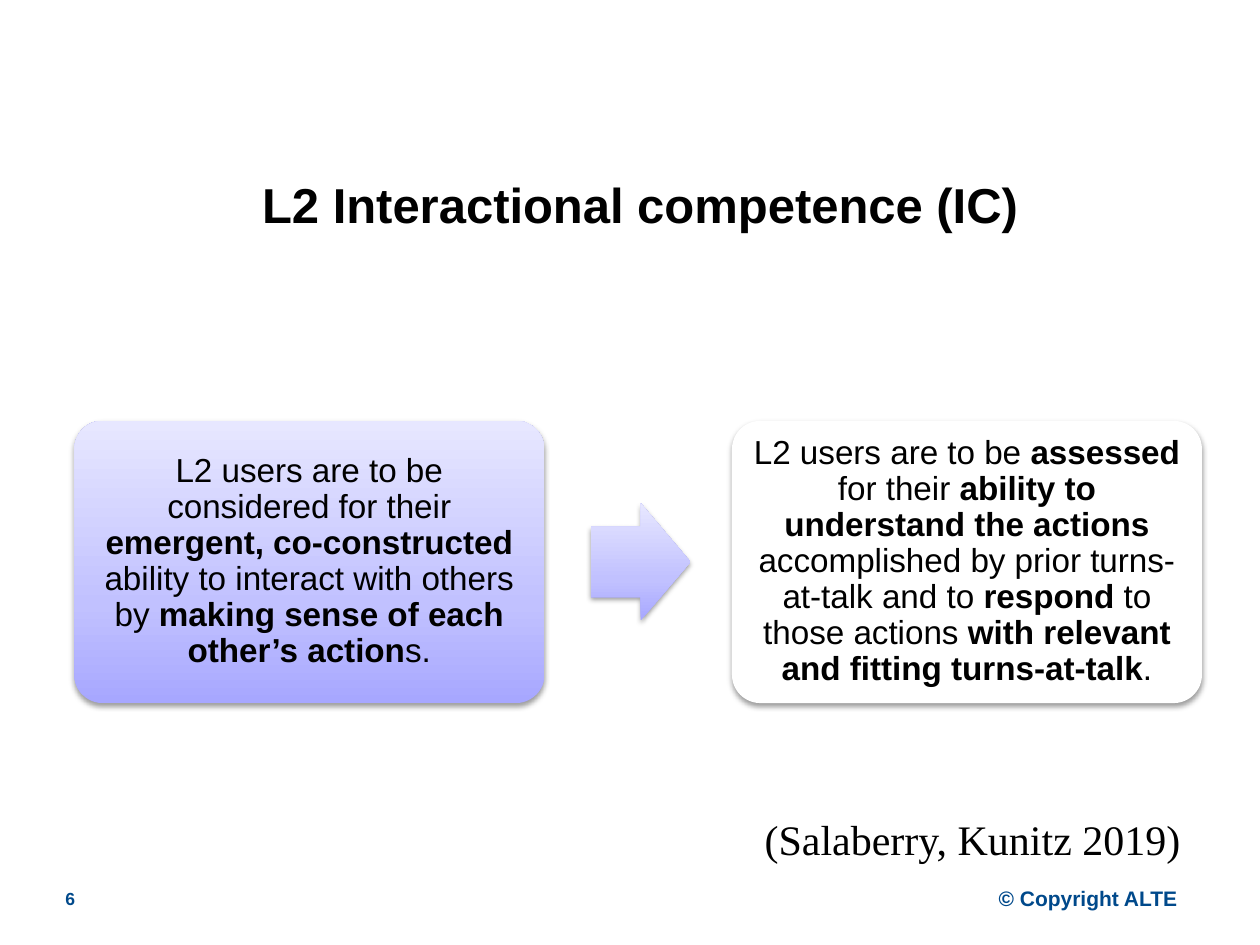
from copy import deepcopy

from lxml import etree
from pptx import Presentation
from pptx.dml.color import RGBColor
from pptx.enum.shapes import MSO_SHAPE
from pptx.enum.text import MSO_ANCHOR, PP_ALIGN
from pptx.oxml.ns import qn
from pptx.util import Inches, Pt

ROUNDED, ARROW = MSO_SHAPE.ROUNDED_RECTANGLE, MSO_SHAPE.RIGHT_ARROW
LEFT, CENTER = PP_ALIGN.LEFT, PP_ALIGN.CENTER
MIDDLE = MSO_ANCHOR.MIDDLE
TITLE_ONLY = 5

COLORS = {
    "text": "000000",
    "footer": "00498B",
    "white": "FFFFFF",
    "shadow": "000000",
    "deep": "A7A7FF",
    "mid": "C1C1FF",
    "pale": "E7E7FF",
}
GRADIENT = [(0, "deep"), (0.35, "mid"), (1, "pale")]

# Each statement is a list of (text, bold) spans
EMERGENT = [
    ("L2 users are to be considered for their ", False),
    ("emergent, co-constructed ", True),
    ("ability to interact with others by ", False),
    ("making sense of each other’s action", True),
    ("s.", False),
]
ASSESSED = [
    ("L2 users are to be ", False),
    ("assessed", True),
    (" for their ", False),
    ("ability to understand the actions ", True),
    ("accomplished by prior turns-at-talk and to ", False),
    ("respond", True),
    (" to those actions ", False),
    ("with relevant and fitting turns-at-talk", True),
    (".", False),
]


def color(name):
    return RGBColor.from_string(COLORS[name])


def write(para, spans, size, font="Arial", ink="text", align=LEFT):
    para.alignment = align
    for text, bold in spans:
        span = para.add_run()
        span.text = text
        span.font.size = Pt(size)
        span.font.name = font
        span.font.bold = bold
        span.font.color.rgb = color(ink)


def fill_gradient(shape):
    shape.fill.gradient()
    shape.fill.gradient_angle = 90
    stop_list = shape._element.spPr.find(".//" + qn("a:gsLst"))
    stop_list.append(deepcopy(stop_list[0]))
    for stop, (position, name) in zip(shape.fill.gradient_stops, GRADIENT):
        stop.position = position
        stop.color.rgb = color(name)


def add_shadow(shape):
    shape.shadow.inherit = False
    effects = shape._element.spPr.find(qn("a:effectLst"))
    shadow = etree.SubElement(
        effects, qn("a:outerShdw"), blurRad=str(Pt(3.1)), dist=str(Pt(1.6)),
        dir="5400000", rotWithShape="0")
    ink = etree.SubElement(shadow, qn("a:srgbClr"), val=COLORS["shadow"])
    etree.SubElement(ink, qn("a:alpha"), val="38000")


def add_block(page, kind, box, adjustments, gradient=True):
    shape = page.shapes.add_shape(kind, *map(Inches, box))
    for index, value in enumerate(adjustments):
        shape.adjustments[index] = value
    if gradient:
        fill_gradient(shape)
    else:
        shape.fill.solid()
        shape.fill.fore_color.rgb = color("white")
    shape.line.fill.background()
    add_shadow(shape)
    return shape


def add_card(page, box, spans, gradient):
    frame = add_block(page, ROUNDED, box, [0.1], gradient).text_frame
    frame.word_wrap = True
    frame.vertical_anchor = MIDDLE
    frame.margin_left = frame.margin_right = Inches(0.08)
    frame.margin_top = frame.margin_bottom = Inches(0.08)
    frame.paragraphs[0].line_spacing = 0.9
    write(frame.paragraphs[0], spans, 19, align=CENTER)


def add_process(page, left, top, width, height):
    """Two cards at the ends of the box with an arrow between them."""
    card_width, arrow_width, arrow_height = 3.73, 0.79, 0.93
    right_card = left + width - card_width
    add_card(page, (left, top, card_width, height), EMERGENT, True)
    add_block(page, ARROW,
              (left + card_width + 0.37, top + (height - arrow_height) / 2,
               arrow_width, arrow_height), [0.6, 0.5])
    add_card(page, (right_card, top, card_width, height), ASSESSED, False)


def add_title(page, box):
    title = page.shapes.title
    title.left, title.top, title.width, title.height = map(Inches, box)
    title.text_frame.vertical_anchor = MIDDLE
    write(title.text_frame.paragraphs[0],
          [("L2 Interactional competence (IC)", True)], 28, align=CENTER)


def add_label(page, box, text, size, bold=False, wrap=False, **style):
    frame = page.shapes.add_textbox(*map(Inches, box)).text_frame
    frame.word_wrap = wrap
    write(frame.paragraphs[0], [(text, bold)], size, **style)


def add_footer(page, left, top, width):
    add_label(page, (left, top + 0.02, 0.67, 0.27), "6", 10,
              bold=True, wrap=True, ink="footer")
    add_label(page, (left + width - 1.69, top, 1.69, 0.3),
              "© Copyright ALTE", 12, bold=True, ink="footer", align=CENTER)


def main():
    deck = Presentation()
    deck.slide_width, deck.slide_height = Inches(10), Inches(7.5)
    page = deck.slides.add_slide(deck.slide_layouts[TITLE_ONLY])

    add_footer(page, 0.42, 6.98, 9.06)
    add_title(page, (0.58, 1.08, 9, 1.08))
    add_process(page, 0.59, 3.34, 8.95, 2.24)
    # Citation
    add_label(page, (5.97, 6.41, 3.63, 0.5), "(Salaberry, Kunitz 2019)", 24,
              font="Times New Roman")

    deck.save("out.pptx")


if __name__ == "__main__":
    main()
